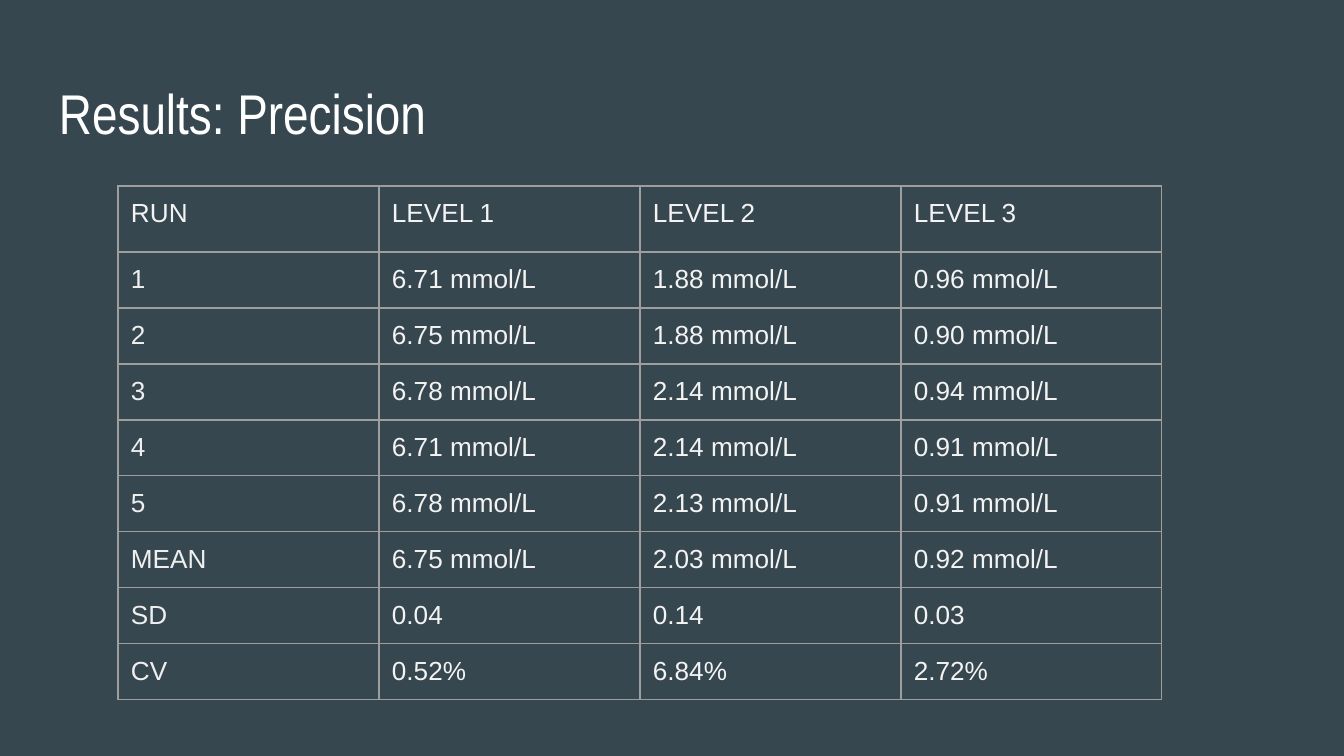
from dataclasses import dataclass

from lxml.etree import SubElement
from pptx import Presentation
from pptx.dml.color import RGBColor
from pptx.enum.text import MSO_ANCHOR, PP_ALIGN
from pptx.oxml.ns import qn
from pptx.util import Emu, Pt

PIXELS_PER_INCH = 134.4
TITLE_ONLY_LAYOUT = 5


@dataclass(frozen=True)
class Theme:
    background: str = "37474F"
    title: str = "FFFFFF"
    value: str = "F3F3F3"
    run_label: str = "EFEFEF"
    border: str = "9E9E9E"
    title_font: str = "Arial Narrow"
    table_font: str = "Arial"
    title_size: int = 30
    table_size: int = 14
    border_width: float = 0.75


THEME = Theme()
INSET = 13

HEADERS = ("RUN", "LEVEL 1", "LEVEL 2", "LEVEL 3")
MEASUREMENTS = (
    ("1", 6.71, 1.88, 0.96),
    ("2", 6.75, 1.88, 0.90),
    ("3", 6.78, 2.14, 0.94),
    ("4", 6.71, 2.14, 0.91),
    ("5", 6.78, 2.13, 0.91),
    ("MEAN", 6.75, 2.03, 0.92),
)
STATISTICS = (
    ("SD", "0.04", "0.14", "0.03"),
    ("CV", "0.52%", "6.84%", "2.72%"),
)


def px(length):
    return Emu(round(length * 914400 / PIXELS_PER_INCH))


def format_text(text_frame, font_name, size, color):
    for paragraph in text_frame.paragraphs:
        paragraph.alignment = PP_ALIGN.LEFT
        for run in paragraph.runs:
            run.font.name = font_name
            run.font.size = Pt(size)
            run.font.color.rgb = RGBColor.from_string(color)


def set_insets(target):
    for side in ("left", "top", "right", "bottom"):
        setattr(target, f"margin_{side}", px(INSET))


def add_title(slide, text, left, top, width, height):
    title = slide.shapes.title
    title.left, title.top = px(left), px(top)
    title.width, title.height = px(width), px(height)
    text_frame = title.text_frame
    text_frame.text = text
    text_frame.word_wrap = True
    text_frame.vertical_anchor = MSO_ANCHOR.TOP
    set_insets(text_frame)
    format_text(text_frame, THEME.title_font, THEME.title_size, THEME.title)


def set_borders(cell):
    properties = cell._tc.get_or_add_tcPr()
    for position, side in enumerate(("lnL", "lnR", "lnT", "lnB")):
        line = SubElement(properties, qn(f"a:{side}"), w=str(Pt(THEME.border_width)))
        fill = SubElement(line, qn("a:solidFill"))
        SubElement(fill, qn("a:srgbClr"), val=THEME.border)
        # Borders come before the cell fill in the schema
        properties.insert(position, line)


def format_cell(cell, text, color):
    cell.text_frame.text = text
    cell.vertical_anchor = MSO_ANCHOR.TOP
    cell.fill.background()
    set_insets(cell)
    set_borders(cell)
    format_text(cell.text_frame, THEME.table_font, THEME.table_size, color)


def add_results_table(slide, rows, left, top, column_width, header_height, row_height):
    column_count = len(rows[0])
    height = header_height + row_height * (len(rows) - 1)
    table = slide.shapes.add_table(
        len(rows), column_count, px(left), px(top),
        px(column_width * column_count), px(height),
    ).table
    table.first_row = False
    table.horz_banding = False
    for column in table.columns:
        column.width = px(column_width)
    for row_index, values in enumerate(rows):
        table.rows[row_index].height = px(row_height if row_index else header_height)
        for column_index, text in enumerate(values):
            is_run_label = row_index > 0 and column_index == 0
            color = THEME.run_label if is_run_label else THEME.value
            format_cell(table.cell(row_index, column_index), text, color)


def main():
    presentation = Presentation()
    presentation.slide_width, presentation.slide_height = px(1344), px(756)
    slide = presentation.slides.add_slide(presentation.slide_layouts[TITLE_ONLY_LAYOUT])

    # Background and heading
    background = slide.background.fill
    background.solid()
    background.fore_color.rgb = RGBColor.from_string(THEME.background)
    add_title(slide, "Results: Precision", left=46, top=66, width=1253, height=85)

    # Precision runs followed by their summary statistics
    measured_rows = [
        (run, *(f"{level:.2f} mmol/L" for level in levels))
        for run, *levels in MEASUREMENTS
    ]
    add_results_table(
        slide, [HEADERS, *measured_rows, *STATISTICS],
        left=118, top=186, column_width=261, header_height=66, row_height=56,
    )

    presentation.save("out.pptx")


if __name__ == "__main__":
    main()
